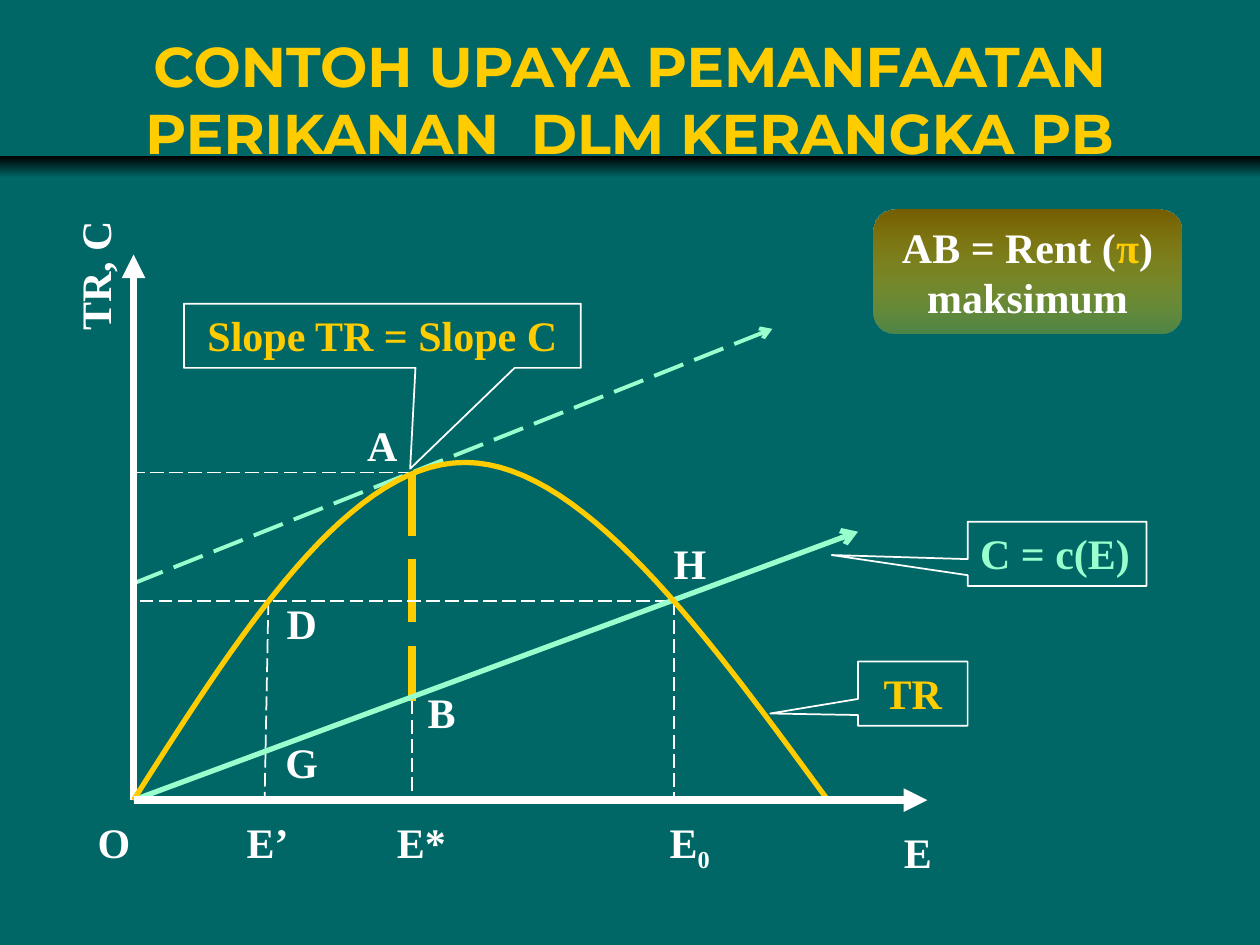
import lxml.etree as etree
import pptx
import pptx.dml.color
import pptx.enum.dml
import pptx.enum.shapes
import pptx.enum.text
import pptx.oxml.ns
import pptx.util
from dataclasses import dataclass

Inches = pptx.util.Inches
Pt = pptx.util.Pt
qn = pptx.oxml.ns.qn
Kind = pptx.enum.shapes.MSO_SHAPE
Align = pptx.enum.text.PP_ALIGN
Anchor = pptx.enum.text.MSO_ANCHOR


@dataclass(frozen=True)
class Theme:
    back: str = "006666"
    gold: str = "FFCC00"
    bronze: str = "765E00"
    mint: str = "99FFCC"
    white: str = "FFFFFF"
    black: str = "000000"
    head: str = "Montserrat"
    body: str = "Times New Roman"
    big: int = 32
    mid: int = 24
    thin: float = 1
    curve: float = 3
    thick: float = 4.5


def rgb(code):
    return pptx.dml.color.RGBColor.from_string(code)


def put(item, values):
    for name, value in values.items():
        setattr(item, name, value)


class Board:
    def __init__(self, slide, theme):
        self.slide, self.theme = slide, theme
        slide.background.fill.solid()
        slide.background.fill.fore_color.rgb = rgb(theme.back)

    def letter(self, shape, runs, align=Align.CENTER, anchor=Anchor.TOP,
               font=None, size=None):
        """Fill a shape with (text, colour[, baseline]) runs."""
        frame = shape.text_frame
        put(frame, {"word_wrap": True, "vertical_anchor": anchor})
        para = frame.paragraphs[0]
        para.alignment = align
        for text, color, *shift in runs:
            run = para.add_run()
            run.text = text
            put(run.font, {"name": font or self.theme.body, "bold": True,
                           "size": Pt(size or self.theme.mid)})
            run.font.color.rgb = rgb(color)
            if shift:
                run._r.get_or_add_rPr().set("baseline", str(shift[0] * 1000))

    def label(self, box, runs, turn=0, **style):
        shape = self.slide.shapes.add_textbox(*map(Inches, box))
        shape.rotation = turn
        self.letter(shape, runs, **style)

    def shape(self, kind, box, adjust=()):
        shape = self.slide.shapes.add_shape(kind, *map(Inches, box))
        shape.shadow.inherit = False
        for i, value in enumerate(adjust):
            shape.adjustments[i] = value
        return shape

    def blend(self, kind, box, colors, adjust=(), alpha=100):
        """Add a shape with a top-down gradient; alpha is for its last stop."""
        shape = self.shape(kind, box, adjust)
        shape.line.fill.background()
        shape.fill.gradient()
        shape.fill.gradient_angle = 270
        for stop, color, place in zip(shape.fill.gradient_stops, colors, (0, 1)):
            stop.color.rgb = rgb(color)
            stop.position = place
        if alpha < 100:
            last = shape.element.spPr.findall(".//" + qn("a:srgbClr"))[-1]
            etree.SubElement(last, qn("a:alpha"), val=str(alpha * 1000))
        return shape

    def callout(self, box, tip, text, color, align=Align.CENTER):
        shape = self.shape(Kind.RECTANGULAR_CALLOUT, box, tip)
        shape.fill.background()
        self.stroke(shape, self.theme.white, self.theme.thin)
        self.letter(shape, [(text, color)], align)

    def stroke(self, shape, color, width, dash=False):
        shape.line.color.rgb = rgb(color)
        shape.line.width = Pt(width)
        if dash:
            shape.line.dash_style = pptx.enum.dml.MSO_LINE.LONG_DASH

    def line(self, start, end, color, width, dash=False, tip=None):
        link = self.slide.shapes.add_connector(
            pptx.enum.shapes.MSO_CONNECTOR.STRAIGHT,
            *map(Inches, (*start, *end)))
        self.stroke(link, color, width, dash)
        if tip:
            etree.SubElement(link.get_or_add_ln(), qn("a:tailEnd"), type=tip)
        etree.SubElement(link.element.spPr, qn("a:effectLst"))

    def curve(self, arcs, color, width, steps=30):
        """Draw joined cubic arcs, each given by four points."""
        dots = [arcs[0][0]]
        for arc in arcs:
            for i in range(1, steps + 1):
                t = i / steps
                parts = ((1 - t) ** 3, 3 * t * (1 - t) ** 2,
                         3 * t * t * (1 - t), t ** 3)
                dots.append(tuple(sum(k * p[axis] for k, p in zip(parts, arc))
                                  for axis in (0, 1)))
        dots = [tuple(map(Inches, dot)) for dot in dots]
        pen = self.slide.shapes.build_freeform(*dots[0])
        pen.add_line_segments(dots[1:], close=False)
        shape = pen.convert_to_shape()
        shape.shadow.inherit = False
        shape.fill.background()
        self.stroke(shape, color, width)


def main():
    deck = pptx.Presentation()
    put(deck, {"slide_width": Inches(10), "slide_height": Inches(7.5)})
    look = Theme()
    board = Board(deck.slides.add_slide(deck.slide_layouts[6]), look)
    gold, mint, white = look.gold, look.mint, look.white

    board.blend(Kind.RECTANGLE, (0, 1.24, 10, 0.17), (look.black, look.back))
    board.label((0.75, 0.16, 8.5, 1.25),
                [("CONTOH UPAYA PEMANFAATAN PERIKANAN  DLM KERANGKA PB", gold)],
                anchor=Anchor.MIDDLE, font=look.head, size=look.big)

    left, base = 1.06, 6.35
    origin = (left, base)
    top, foot = (3.27, 3.75), (3.27, 5.56)
    board.line((left, 4.63), (6.13, 2.61), mint, 2.25, True, "arrow")
    board.line(top, foot, gold, look.thick, True)
    guides = [(top, (left, 3.75)), ((5.31, 4.77), (left, 4.77)),
              ((5.35, 4.77), (5.35, base)), ((2.13, 4.77), (2.1, base)),
              (foot, (3.27, base))]
    for start, end in guides:
        board.line(start, end, white, look.thin, True)
    board.line(origin, (left, 2.02), white, look.thick, tip="triangle")

    labels = [("E", 7.05, 6.51, 0.47), ("O", 0.67, 6.43, 0.47),
              ("E’", 1.85, 6.43, 0.55), ("E*", 3.03, 6.43, 0.63),
              ("A", 2.8, 3.28, 0.47), ("B", 3.27, 5.4, 0.47),
              ("D", 2.16, 4.69, 0.47), ("G", 2.16, 5.8, 0.47),
              ("H", 5.24, 4.22, 0.47)]
    for text, x, y, width in labels:
        board.label((x, y, width, 0.5), [(text, white)])
    board.label((5.16, 6.43, 0.63, 0.5), [("E", white), ("0", white, -25)])
    board.label((0.2, 1.94, 1.1, 0.5), [("TR, C", white)], turn=270)

    board.callout((7.68, 4.14, 1.42, 0.51), (-1.26, 0.02), "C = c(E)", mint,
                  Align.LEFT)
    board.callout((6.81, 5.25, 0.87, 0.51), (-1.3, 0.31), "TR", gold)
    board.callout((1.46, 2.41, 3.15, 0.51), (0.07, 2.07),
                  "Slope TR = Slope C", gold)
    rent = board.blend(Kind.ROUNDED_RECTANGLE, (6.93, 1.66, 2.45, 0.99),
                       (look.bronze, gold), (0.17,), alpha=30)
    board.letter(rent, [("AB = Rent (", white), ("π", gold),
                        (") maksimum", white)])

    board.line(origin, (6.81, 4.22), mint, look.curve, tip="arrow")
    peak = (3.69, 3.67)
    board.curve([(origin, (1.91, 5.01), (2.77, 3.67), peak),
                 (peak, (4.61, 3.67), (5.59, 5.01), (6.57, base))],
                gold, look.curve)
    board.line(origin, (7.36, base), white, look.thick, tip="triangle")
    deck.save("out.pptx")


if __name__ == "__main__":
    main()
